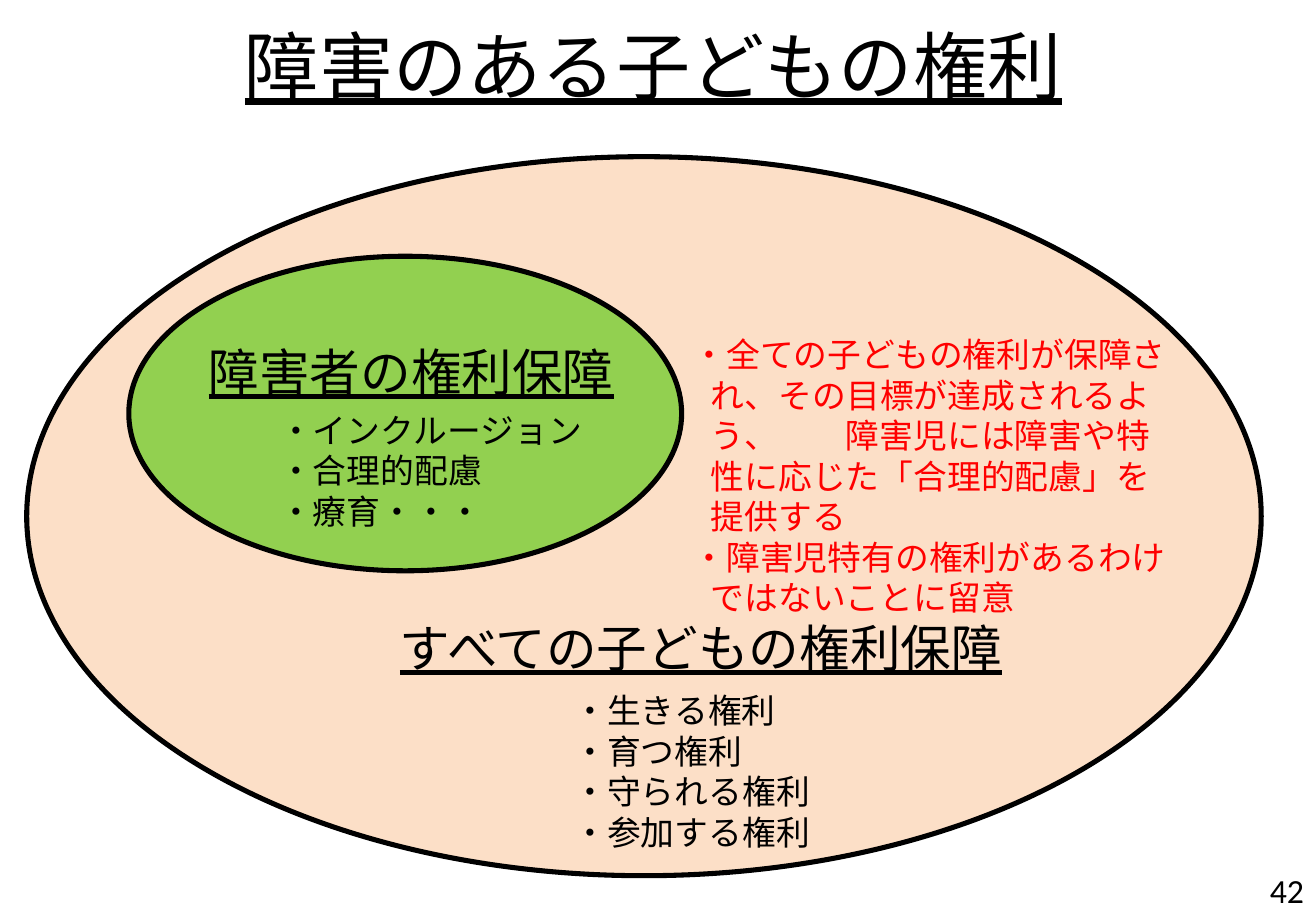
"""Build a slide on the rights of children with disabilities."""
from lxml.etree import SubElement
from pptx import Presentation
from pptx.dml.color import RGBColor
from pptx.enum.shapes import MSO_SHAPE
from pptx.enum.text import MSO_ANCHOR, MSO_AUTO_SIZE, PP_ALIGN
from pptx.oxml.ns import qn
from pptx.util import Inches, Pt

BLACK = RGBColor(0x00, 0x00, 0x00)
RED = RGBColor(0xFF, 0x00, 0x00)
PEACH = RGBColor(0xFA, 0xC0, 0x90)
GREEN = RGBColor(0x92, 0xD0, 0x50)

TITLE = {"name": "Calibri", "size": Pt(44), "underline": True}
HEADING = {"name": "Calibri", "size": Pt(30), "underline": True}
RIGHTS = {"name": "Arial", "size": Pt(20)}
PAGE = {"name": "Calibri", "size": Pt(20)}

deck = Presentation()
deck.slide_width, deck.slide_height = Inches(10.83), Inches(7.5)
slide = deck.slides.add_slide(deck.slide_layouts[5])


def area(left, top, width, height):
    """Turn percentages of the slide into lengths."""
    across, down = deck.slide_width / 100, deck.slide_height / 100
    return [int(share) for share in
            (left * across, top * down, width * across, height * down)]


def write(frame, lines, style, color=BLACK, align=PP_ALIGN.LEFT, spacing=None, hanging=0):
    """Fill a text frame with one formatted paragraph per line."""
    frame.text = "\n".join(lines)
    frame.word_wrap = True
    for paragraph in frame.paragraphs:
        paragraph.alignment = align
        paragraph.line_spacing = spacing
        if hanging:
            properties = paragraph._p.get_or_add_pPr()
            properties.set("marL", str(hanging))
            properties.set("indent", str(-hanging))
        for run in paragraph.runs:
            for attribute, value in style.items():
                setattr(run.font, attribute, value)
            run.font.color.rgb = color
            SubElement(run.font._element, qn("a:ea"), typeface=style["name"])


title = slide.shapes.title
title.left, title.top, title.width, title.height = area(2.03, 1.33, 95.29, 11.47)
title.text_frame.auto_size = MSO_AUTO_SIZE.NONE
title.text_frame.vertical_anchor = MSO_ANCHOR.MIDDLE
write(title.text_frame, ["障害のある子どもの権利"], TITLE, align=PP_ALIGN.CENTER)

for place, color, opacity in (
    ((2.03, 17.2, 93.81, 78.93), PEACH, 50),
    ((9.79, 28.13, 42.01, 34.53), GREEN, 100),
):
    circle = slide.shapes.add_shape(MSO_SHAPE.OVAL, *area(*place))
    circle.shadow.inherit = False
    circle.fill.solid()
    circle.fill.fore_color.rgb = color
    circle.line.color.rgb = BLACK
    circle.line.width = Pt(3)
    if opacity < 100:
        tint = circle._element.spPr.find(qn("a:solidFill"))[0]
        SubElement(tint, qn("a:alpha"), val=str(opacity * 1000))

centered = {"style": HEADING, "align": PP_ALIGN.CENTER}
listed = {"style": RIGHTS, "spacing": Pt(24)}
texts = (
    ((28.9, 67.07, 48.75, 8.4), ["すべての子どもの権利保障"], centered),
    ((14.4, 36.8, 33.7, 8.4), ["障害者の権利保障"], centered),
    ((20.31, 44.27, 26, 14.8),
     ["・インクルージョン", "・合理的配慮", "・療育・・・"], listed),
    ((42.66, 75.07, 21, 19.33),
     ["・生きる権利", "・育つ権利", "・守られる権利", "・参加する権利"], listed),
    ((51.71, 36, 38.5, 27.6),
     ["・全ての子どもの権利が保障され、その目標が達成されるよう、　　障害児には障害や特性に応じた「合理的配慮」を提供する",
      "・障害児特有の権利があるわけではないことに留意"],
     {**listed, "color": RED, "hanging": Inches(0.15)}),
)
for place, lines, look in texts:
    write(slide.shapes.add_textbox(*area(*place)).text_frame, lines, **look)

page_number = slide.shapes.add_textbox(*area(76.73, 95.46, 23.27, 4.54)).text_frame
page_number.vertical_anchor = MSO_ANCHOR.MIDDLE
page_number.margin_top = page_number.margin_bottom = 0
write(page_number, ["42"], PAGE, align=PP_ALIGN.RIGHT)

deck.save("out.pptx")
